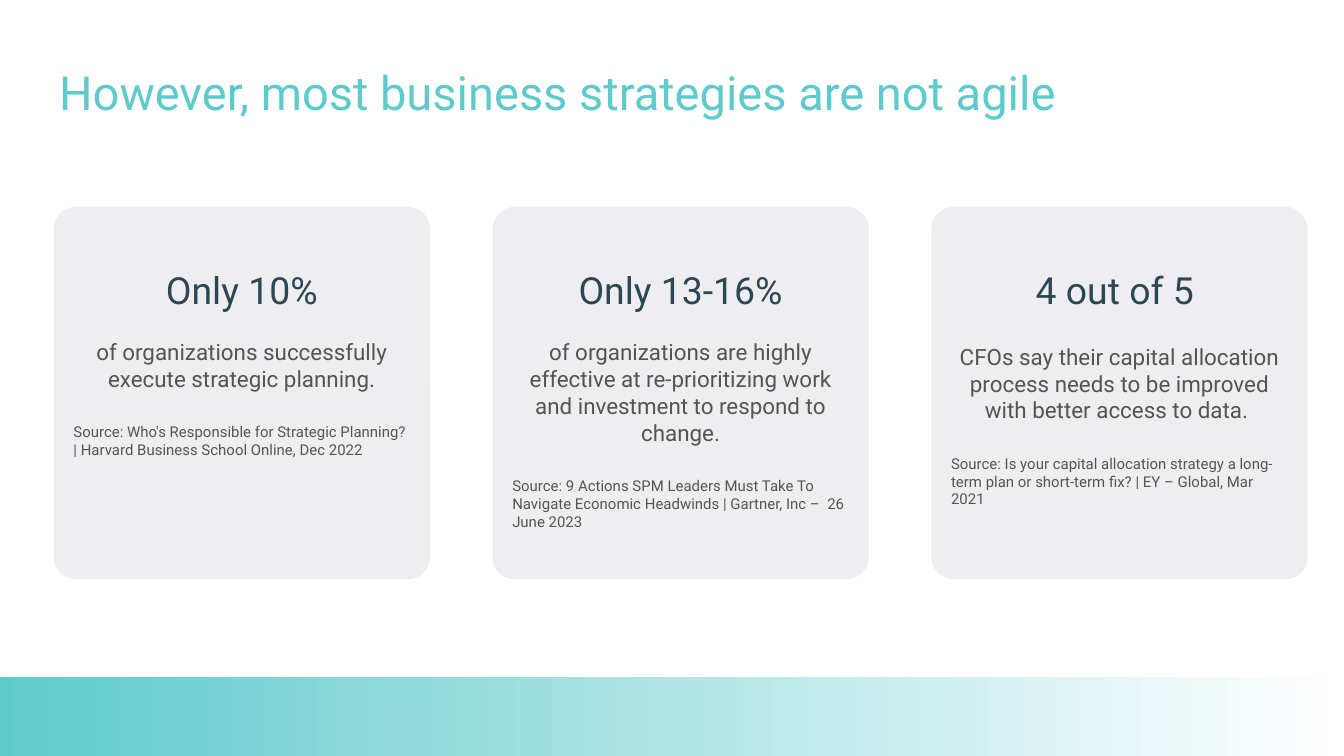
from pptx import Presentation
from pptx.dml.color import RGBColor
from pptx.enum.shapes import MSO_SHAPE as Shape
from pptx.enum.text import MSO_ANCHOR as Anchor, PP_ALIGN as Align
from pptx.util import Inches, Pt

WIDTH = 10
HEIGHT = WIDTH * 9 / 16
UNIT = WIDTH / 100  # side of one square grid cell
TEAL, NAVY, GREY, PALE, WHITE = "5FCACC", "2A4753", "545454", "EEEEF0", "FFFFFF"

# Headline, statement, source, gap above the statement in points
CARDS = [
    ("Only 10%",
     "of organizations successfully execute strategic planning.",
     "Source: Who's Responsible for Strategic Planning? | Harvard Business School Online, Dec 2022",
     14),
    ("Only 13-16%",
     "of organizations are highly effective at re-prioritizing work and investment to respond to change.",
     "Source: 9 Actions SPM Leaders Must Take To Navigate Economic Headwinds | Gartner, Inc –  26 June 2023",
     14),
    ("4 out of 5 ",
     "CFOs say their capital allocation process needs to be improved with better access to data. ",
     "Source: Is your capital allocation strategy a long-term plan or short-term fix? | EY – Global, Mar 2021",
     16.5),
]


def color(value):
    return RGBColor.from_string(value)


def write(paragraph, text, size, ink, align=Align.LEFT, before=0):
    paragraph.alignment = align
    paragraph.space_before = Pt(before)
    run = paragraph.add_run()
    run.text = text
    run.font.name = "Roboto"
    run.font.size = Pt(size)
    run.font.color.rgb = color(ink)


class SlideBuilder:
    """Holds the slide and its style; lengths are counted in grid cells."""

    def __init__(self, presentation):
        self.slide = presentation.slides.add_slide(presentation.slide_layouts[5])

    def box(self, *cells):
        return [Inches(count * UNIT) for count in cells]

    def frame(self, shape, anchor, top_inset=0.1):
        frame = shape.text_frame
        frame.word_wrap = True
        frame.vertical_anchor = anchor
        frame.margin_left = frame.margin_right = frame.margin_bottom = Inches(0.1)
        frame.margin_top = Inches(top_inset)
        return frame

    def shape(self, kind, *place):
        shape = self.slide.shapes.add_shape(kind, *self.box(*place))
        shape.shadow.inherit = False
        shape.line.fill.background()
        return shape

    def band(self, *place):
        fill = self.shape(Shape.RECTANGLE, *place).fill
        fill.gradient()
        fill.gradient_angle = 0
        for stop, position, tint in zip(fill.gradient_stops, (0, 1), (TEAL, WHITE)):
            stop.position = position
            stop.color.rgb = color(tint)

    def title(self, text, *place):
        title = self.slide.shapes.title
        title.left, title.top, title.width, title.height = self.box(*place)
        frame = self.frame(title, Anchor.MIDDLE)
        write(frame.paragraphs[0], text, 25.2, TEAL)

    def card(self, headline, statement, source, gap, *place):
        card = self.shape(Shape.ROUNDED_RECTANGLE, *place)
        card.adjustments[0] = 0.06
        card.fill.solid()
        card.fill.fore_color.rgb = color(PALE)
        frame = self.frame(card, Anchor.TOP, top_inset=0.4)
        write(frame.paragraphs[0], headline, 20, NAVY, Align.CENTER)
        write(frame.add_paragraph(), statement, 12, GREY, Align.CENTER, gap)
        write(frame.add_paragraph(), source, 8, GREY, before=16.5)


def main():
    presentation = Presentation()
    presentation.slide_width, presentation.slide_height = Inches(WIDTH), Inches(HEIGHT)
    builder = SlideBuilder(presentation)

    # Gradient band along the bottom edge
    builder.band(-0.3, 50.4, 100.3, 6)

    # Title
    builder.title("However, most business strategies are not agile", 3.4, 3.7, 93.2, 6.3)

    # Three equally spaced cards
    left, card_width, gutter = 4, 28, 4.65
    for column, content in enumerate(CARDS):
        builder.card(*content, left + column * (card_width + gutter), 15.4, card_width, 27.7)

    presentation.save("out.pptx")


if __name__ == "__main__":
    main()
